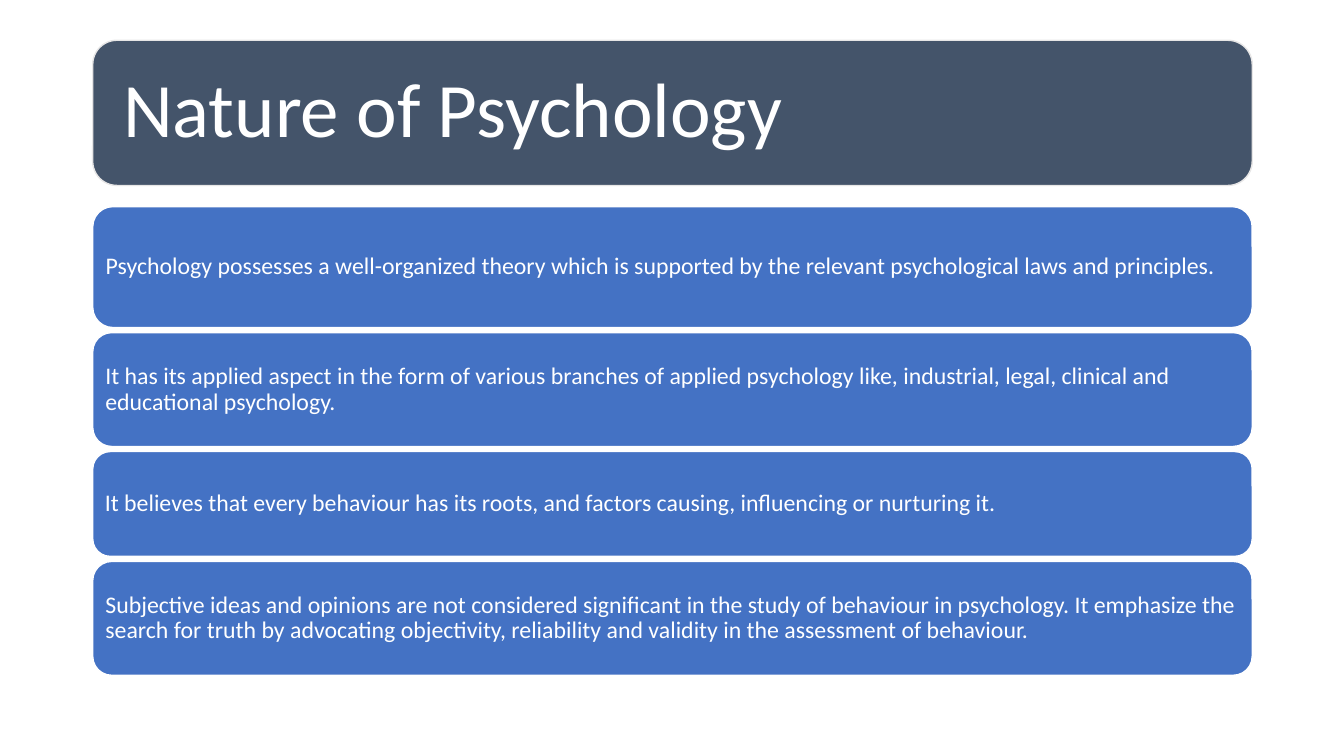
"""Build a slide that lists the nature of psychology in stacked rounded boxes."""
from pptx import Presentation, util as u
from pptx.dml.color import RGBColor
from pptx.enum import shapes, text

TITLE = "Nature of Psychology"
POINTS = [
    (1.2, "Psychology possesses a well-organized theory which is supported by the relevant "
          "psychological laws and principles."),
    (1.13, "It has its applied aspect in the form of various branches of applied psychology like, "
           "industrial, legal, clinical and educational psychology."),
    (1.04, "It believes that every behaviour has its roots, and factors causing, influencing or "
           "nurturing it."),
    (1.13, "Subjective ideas and opinions are not considered significant in the study of behaviour "
           "in psychology. It emphasize the search for truth by advocating objectivity, "
           "reliability and validity in the assessment of behaviour."),
]
WIDTH, HEIGHT = 13.33, 7.5
LEFT, BOX_WIDTH = 0.92, 11.5
BANNER_TOP, BANNER_HEIGHT, BANNER_PAD = 0.4, 1.44, 0.07
POINTS_TOP, GAP = 2.05, 0.05


def color(value):
    return RGBColor.from_string(value)


def add_box(s, top, height, fill, line):
    box = [u.Inches(v) for v in (LEFT, top, BOX_WIDTH, height)]
    sp = s.shapes.add_shape(shapes.MSO_SHAPE.ROUNDED_RECTANGLE, *box)
    sp.shadow.inherit = False
    sp.fill.solid()
    sp.fill.fore_color.rgb = color(fill)
    sp.line.color.rgb = color(line)
    sp.line.width = u.Pt(1)
    return sp


def write(sp, words, size, inset):
    tf = sp.text_frame
    tf.text = words
    frame = dict.fromkeys(("margin_left", "margin_top", "margin_right", "margin_bottom"),
                          u.Inches(inset))
    frame.update(word_wrap=True, auto_size=text.MSO_AUTO_SIZE.NONE,
                 vertical_anchor=text.MSO_ANCHOR.MIDDLE)
    p = tf.paragraphs[0]
    formats = [
        (tf, frame),
        (p, {"alignment": text.PP_ALIGN.LEFT, "line_spacing": 0.9}),
        (p.runs[0].font, {"name": "Calibri", "size": u.Pt(size)}),
    ]
    for target, values in formats:
        for name, value in values.items():
            setattr(target, name, value)
    p.runs[0].font.color.rgb = color("FFFFFF")


def main():
    prs = Presentation()
    prs.slide_width, prs.slide_height = u.Inches(WIDTH), u.Inches(HEIGHT)
    s = prs.slides.add_slide(prs.slide_layouts[5])

    banner = add_box(s, BANNER_TOP, BANNER_HEIGHT, "44546A", "E7E6E6")
    title = s.shapes.title
    pad = u.Inches(BANNER_PAD)
    title.left, title.top = banner.left + pad, banner.top + pad
    title.width, title.height = banner.width - 2 * pad, banner.height - 2 * pad
    write(title, TITLE, 55, 0.23)
    banner._element.addnext(title._element)

    top = POINTS_TOP
    for height, words in POINTS:
        write(add_box(s, top, height, "4472C4", "FFFFFF"), words, 17, 0.07)
        top += height + GAP

    prs.save("out.pptx")


if __name__ == "__main__":
    main()
